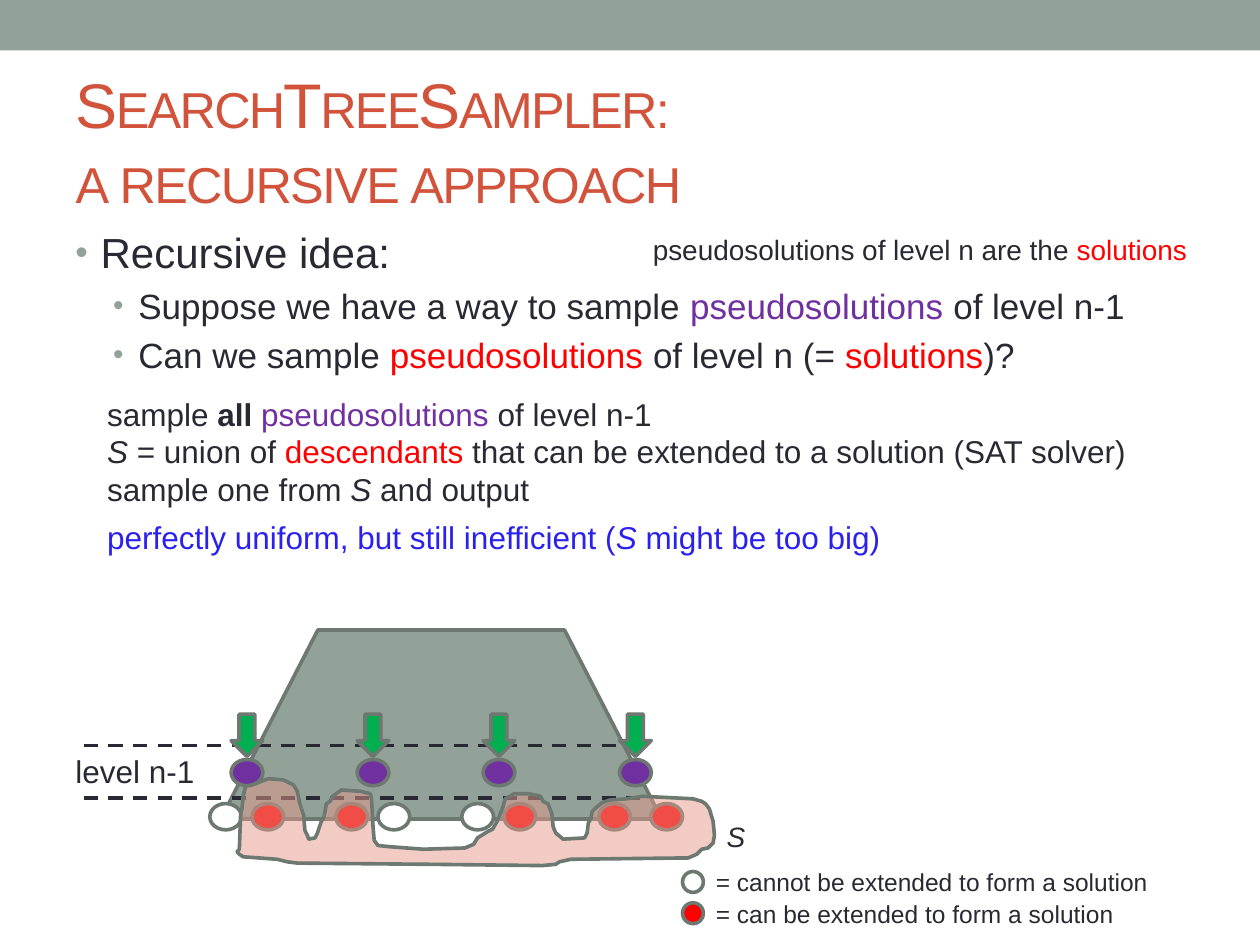
from lxml import etree
from pptx import Presentation
from pptx.dml.color import RGBColor
from pptx.enum.dml import MSO_LINE
from pptx.enum.shapes import MSO_CONNECTOR, MSO_SHAPE as SHAPE
from pptx.enum.text import MSO_ANCHOR, MSO_AUTO_SIZE, PP_ALIGN
from pptx.oxml.ns import qn
from pptx.util import Cm, Pt

COLORS = {
    "sage": "93A299", "outline": "6D7871", "title": "D2533C", "text": "292934",
    "red": "FF0000", "purple": "7030A0", "blue": "2B21EF", "green": "00B050",
    "white": "FFFFFF", "pink": "E4988A",
}
rgb = {name: RGBColor.from_string(value) for name, value in COLORS.items()}

prs = Presentation()
prs.slide_width, prs.slide_height = Cm(25.4), Cm(19.05)
slide = prs.slides.add_slide(prs.slide_layouts[5])
shapes = slide.shapes


def add_solid(kind, left, top, width, height, fill):
    solid = shapes.add_shape(kind, Cm(left), Cm(top), Cm(width), Cm(height))
    solid.shadow.inherit = False
    solid.fill.solid()
    solid.fill.fore_color.rgb = rgb[fill]
    solid.line.color.rgb = rgb["outline"]
    solid.line.width = Pt(2.08)
    return solid


def add_text(left, top, width, height, size, lines):
    box = shapes.add_textbox(Cm(left), Cm(top), Cm(width), Cm(height))
    frame = box.text_frame
    frame.word_wrap = True
    for index, line in enumerate(lines):
        paragraph = frame.paragraphs[0] if index == 0 else frame.add_paragraph()
        paragraph.font.name = "Arial"
        paragraph.font.size = Pt(size)
        for words, color, style in line:
            run = paragraph.add_run()
            run.text = words
            run.font.color.rgb = rgb[color]
            if style == "bold":
                run.font.bold = True
            elif style == "italic":
                run.font.italic = True
    return frame.paragraphs


top_bar = add_solid(SHAPE.RECTANGLE, 0, 0, 25.4, 1.02, "sage")
top_bar.line.fill.background()

title = shapes.title
title.left, title.top, title.width, title.height = Cm(1.27), Cm(1.47), Cm(22.86), Cm(2.74)
title.text_frame.text = "SearchTreeSampler: \va recursive approach"
title.text_frame.vertical_anchor = MSO_ANCHOR.MIDDLE
title.text_frame.auto_size = MSO_AUTO_SIZE.NONE
heading = title.text_frame.paragraphs[0]
heading.alignment = PP_ALIGN.LEFT
heading.font.name = "Arial"
heading.font.size = Pt(36)
heading.font.color.rgb = rgb["title"]
for run in heading.runs:
    properties = run.font._element if hasattr(run.font, "_element") else run._r.get_or_add_rPr()
    properties.set("cap", "small")
    properties.set("spc", "-100")

tree = add_solid(SHAPE.TRAPEZOID, 4.45, 12.7, 8.89, 3.81, "sage")
tree.adjustments[0] = 0.514

NODE_W, NODE_H = 0.64, 0.53
sampled_x = [4.66, 7.2, 9.74, 12.49]
node_rows = [
    (16.2, "red", [12.07, 5.08, 6.77, 10.16]),
    (16.2, "white", [4.23, 7.62, 9.31]),
    (15.31, "purple", sampled_x),
]
for top, fill, lefts in node_rows:
    for left in lefts:
        add_solid(SHAPE.OVAL, left, top, NODE_W, NODE_H, fill)

ideas = add_text(1.27, 4.45, 22.86, 8.46, 20, [
    [("Recursive idea:", "text", "")],
    [("Suppose we have a way to sample ", "text", ""), ("pseudosolutions ", "purple", ""),
     ("of level n-1", "text", "")],
    [("Can we sample ", "text", ""), ("pseudosolutions ", "red", ""),
     ("of level n (= ", "text", ""), ("solutions", "red", ""), (")?", "text", "")],
])
ideas[0].font.size = Pt(24)
for idea, margin, gap in zip(ideas, [0.51, 1.27, 1.27], [4.8, 4, 4]):
    idea.space_before = Pt(gap)
    layout = idea._p.get_or_add_pPr()
    layout.set("marL", str(Cm(margin)))
    layout.set("indent", str(-Cm(0.51)))
    bullet_color = etree.Element(qn("a:buClr"))
    etree.SubElement(bullet_color, qn("a:srgbClr"), val=COLORS["sage"])
    bullet_size = etree.Element(qn("a:buSzPct"), val="85000")
    bullet_font = etree.Element(qn("a:buFont"), typeface="Arial")
    bullet = etree.Element(qn("a:buChar"), char="•")
    defaults = layout.find(qn("a:defRPr"))
    for part in (bullet_color, bullet_size, bullet_font, bullet):
        defaults.addprevious(part)

steps = add_text(1.91, 7.83, 21.8, 4.4, 18, [
    [("sample ", "text", ""), ("all ", "text", "bold"), ("pseudosolutions ", "purple", ""),
     ("of level n-1", "text", "")],
    [("S", "text", "italic"), (" = union of ", "text", ""), ("descendants", "red", ""),
     (" that can be extended to a solution (SAT solver)", "text", "")],
    [("sample one from ", "text", ""), ("S", "text", "italic"), (" and output", "text", "")],
    [("perfectly uniform, but still inefficient (", "blue", ""), ("S", "blue", "italic"),
     (" might be too big)", "blue", "")],
])
steps[-1].space_before = Pt(6)

add_solid(SHAPE.OVAL, 13.12, 16.2, NODE_W, NODE_H, "red")
add_text(1.27, 15.03, 8.26, 1.02, 18, [[("level n-1", "text", "")]])

level_lines = [
    (4.66, 16.09, 13.12, "sage", 0.75, MSO_LINE.SOLID),
    (1.69, 16.09, 13.12, "text", 2, MSO_LINE.DASH),
    (1.69, 15.03, 12.7, "text", 2, MSO_LINE.DASH),
]
for left, y, right, color, weight, dash in level_lines:
    level = shapes.add_connector(MSO_CONNECTOR.STRAIGHT, Cm(left), Cm(y), Cm(right), Cm(y))
    level.line.color.rgb = rgb[color]
    level.line.width = Pt(weight)
    level.line.dash_style = dash
    etree.SubElement(level._element.spPr, qn("a:effectLst"))

for left in sampled_x:
    add_solid(SHAPE.DOWN_ARROW, left, 14.4, NODE_W, 0.85, "green")

union_outline = [
    (190, 674), (191, 646), (192, 642), (193, 632), (195, 624), (200, 623), (208, 620),
    (213, 618), (225, 619), (233, 623), (236, 628), (238, 638), (241, 647), (242, 659),
    (244, 663), (245, 666), (250, 665), (252, 661), (255, 652), (257, 649), (258, 644),
    (259, 638), (262, 636), (264, 632), (271, 627), (286, 628), (294, 630), (295, 635),
    (296, 655), (297, 667), (300, 671), (309, 672), (336, 674), (369, 673), (376, 670),
    (379, 665), (387, 660), (391, 658), (395, 651), (399, 641), (401, 634), (408, 630),
    (420, 630), (429, 632), (431, 636), (435, 638), (438, 646), (439, 656), (441, 661),
    (447, 666), (464, 665), (466, 661), (467, 653), (469, 650), (470, 644), (473, 641),
    (478, 637), (484, 635), (497, 634), (510, 632), (550, 634), (557, 636), (560, 638),
    (563, 642), (566, 652), (567, 663), (566, 669), (562, 673), (557, 674), (553, 678),
    (546, 681), (537, 681), (453, 682), (444, 684), (441, 686), (430, 687), (343, 686),
    (236, 685), (228, 684), (220, 682), (193, 680), (190, 678), (188, 676),
]
builder = shapes.build_freeform(*union_outline[0], scale=Cm(2.54) / 100)
builder.add_line_segments(union_outline[1:], close=True)
union = builder.convert_to_shape()
union.shadow.inherit = False
union.fill.solid()
union.fill.fore_color.rgb = rgb["pink"]
union_fill = union._element.spPr.find(qn("a:solidFill")).find(qn("a:srgbClr"))
etree.SubElement(union_fill, qn("a:alpha"), val="50000")
union.line.color.rgb = rgb["outline"]
union.line.width = Pt(2.08)

add_text(14.4, 16.4, 1.48, 0.94, 16, [[("S", "text", "italic")]])
add_text(12.91, 4.57, 11.43, 0.94, 16, [
    [("pseudosolutions of level n are the ", "text", ""), ("solutions", "red", "")],
])

legend = [
    (17.36, "white", "= cannot be extended to form a solution"),
    (17.99, "red", "= can be extended to form a solution"),
]
for top, fill, meaning in legend:
    add_solid(SHAPE.OVAL, 13.76, top + 0.21, 0.42, 0.42, fill)
    add_text(14.18, top, 11.43, 0.86, 14, [[(meaning, "text", "")]])

prs.save("out.pptx")
